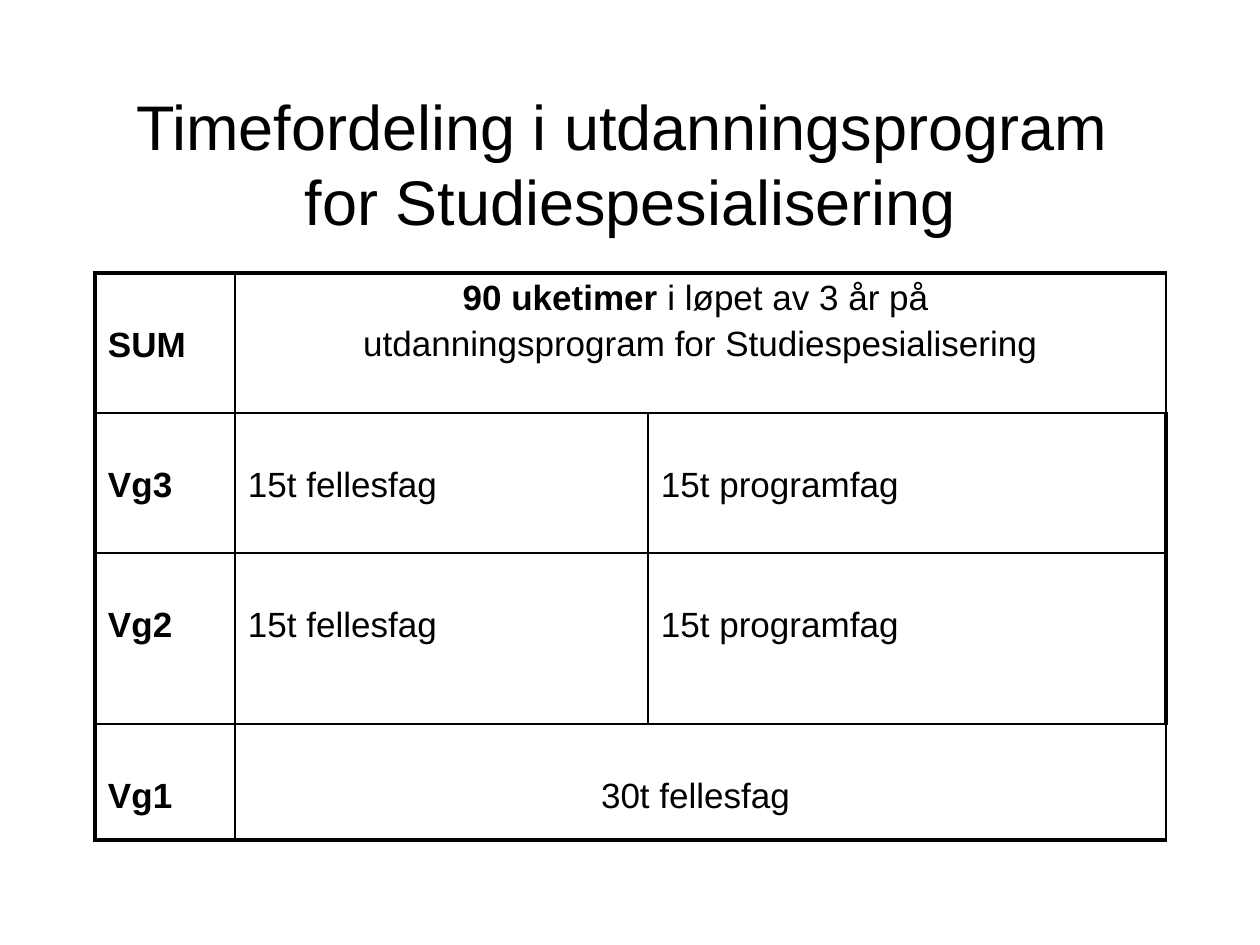
"""Build a slide with a table of weekly hours for each school year."""
from dataclasses import dataclass

from lxml import etree
from pptx import Presentation
from pptx.dml.color import RGBColor
from pptx.enum.text import MSO_ANCHOR, MSO_AUTO_SIZE, PP_ALIGN
from pptx.oxml.ns import qn
from pptx.util import Pt

CENTER, LEFT = PP_ALIGN.CENTER, PP_ALIGN.LEFT
MIDDLE, TOP = MSO_ANCHOR.MIDDLE, MSO_ANCHOR.TOP
NO_AUTOFIT = MSO_AUTO_SIZE.NONE
EMU_PER_PX = 914400 / 126
FONT = "Arial"
BLACK = "000000"
OUTER_LINE, INNER_LINE = 2.25, 1
COLUMN_WIDTHS = (140, 413, 518)
ROW_HEIGHTS = (140, 140, 171, 116)
MARGIN_SIDE, MARGIN_TOP, LINE_PITCH = 13, 6, 47


@dataclass(frozen=True)
class Span:
    text: str
    bold: bool = False


@dataclass(frozen=True)
class Entry:
    row: int
    column: int
    lines: tuple[tuple[Span, ...], ...]
    columns: int = 1


def label(row: int, text: str) -> Entry:
    """Describe a bold heading in the first column."""
    return Entry(row, 0, ((Span(text, True),),))


def hours(row: int, column: int, text: str, columns: int = 1) -> Entry:
    """Describe a one-line cell with hours."""
    return Entry(row, column, ((Span(text),),), columns)


ENTRIES = (
    label(0, "SUM"),
    Entry(0, 1, (
        (Span("90 uketimer ", True), Span("i løpet av 3 år på ")),
        (Span("utdanningsprogram for Studiespesialisering"),),
    ), 2),
    label(1, "Vg3"),
    hours(1, 1, "15t fellesfag"),
    hours(1, 2, "15t programfag"),
    label(2, "Vg2"),
    hours(2, 1, "15t fellesfag"),
    hours(2, 2, "15t programfag"),
    label(3, "Vg1"),
    hours(3, 1, "30t fellesfag ", 2),
)


def px(length: int) -> int:
    """Turn pixels into EMU."""
    return round(length * EMU_PER_PX)


def color(value: str) -> RGBColor:
    """Turn a hex string into a colour."""
    return RGBColor.from_string(value)


def format_run(run, size: int, bold: bool = False) -> None:
    """Set the font of a run."""
    run.font.name = FONT
    run.font.size = Pt(size)
    run.font.bold = bold
    run.font.color.rgb = color(BLACK)


def add_title(page) -> None:
    """Fill and place the title placeholder."""
    title = page.shapes.title
    title.left, title.top, title.width, title.height = map(px, (95, 84, 1071, 158))
    frame = title.text_frame
    frame.text = "Timefordeling i utdanningsprogram \vfor Studiespesialisering"
    frame.auto_size = NO_AUTOFIT
    frame.vertical_anchor = MIDDLE
    para = frame.paragraphs[0]
    para.alignment = CENTER
    for run in para.runs:
        format_run(run, 36)


def set_borders(cell, row: int, column: int) -> None:
    """Draw thick lines at the table's edge and thin lines inside."""
    edges = {
        "a:lnL": column == 0,
        "a:lnR": column == len(COLUMN_WIDTHS) - 1,
        "a:lnT": row == 0,
        "a:lnB": row == len(ROW_HEIGHTS) - 1,
    }
    properties = cell._tc.get_or_add_tcPr()
    for tag, outer in edges.items():
        width = Pt(OUTER_LINE if outer else INNER_LINE)
        line = etree.SubElement(properties, qn(tag), w=str(width))
        fill = etree.SubElement(line, qn("a:solidFill"))
        etree.SubElement(fill, qn("a:srgbClr"), val=BLACK)


def fill_cell(table, entry: Entry) -> None:
    """Write the lines of an entry, placing single lines at the second line's level."""
    cell = table.cell(entry.row, entry.column)
    if entry.columns > 1:
        cell.merge(table.cell(entry.row, entry.column + entry.columns - 1))
    cell.margin_left = cell.margin_right = px(MARGIN_SIDE)
    cell.margin_top = px(MARGIN_TOP + (LINE_PITCH if len(entry.lines) == 1 else 0))
    cell.margin_bottom = px(MARGIN_TOP)
    cell.vertical_anchor = TOP
    frame = cell.text_frame
    for index, line in enumerate(entry.lines):
        para = frame.add_paragraph() if index else frame.paragraphs[0]
        para.alignment = CENTER if entry.columns > 1 else LEFT
        if index:
            para.space_before = Pt(4)
        for span in line:
            run = para.add_run()
            run.text = span.text
            format_run(run, 20, span.bold)


def add_hours_table(page) -> None:
    """Add the table with its grid, borders and entries."""
    frame = page.shapes.add_table(
        len(ROW_HEIGHTS), len(COLUMN_WIDTHS), px(95), px(273),
        px(sum(COLUMN_WIDTHS)), px(sum(ROW_HEIGHTS)))
    table = frame.table
    table.first_row = table.horz_banding = False
    for column, width in zip(table.columns, COLUMN_WIDTHS):
        column.width = px(width)
    for row, height in zip(table.rows, ROW_HEIGHTS):
        row.height = px(height)
    for row in range(len(ROW_HEIGHTS)):
        for column in range(len(COLUMN_WIDTHS)):
            cell = table.cell(row, column)
            set_borders(cell, row, column)
            cell.fill.background()
    for entry in ENTRIES:
        fill_cell(table, entry)


def main() -> None:
    """Build and save the deck."""
    deck = Presentation()
    deck.slide_width, deck.slide_height = px(1260), px(945)
    page = deck.slides.add_slide(deck.slide_layouts[5])
    add_title(page)
    add_hours_table(page)
    deck.save("out.pptx")


if __name__ == "__main__":
    main()
